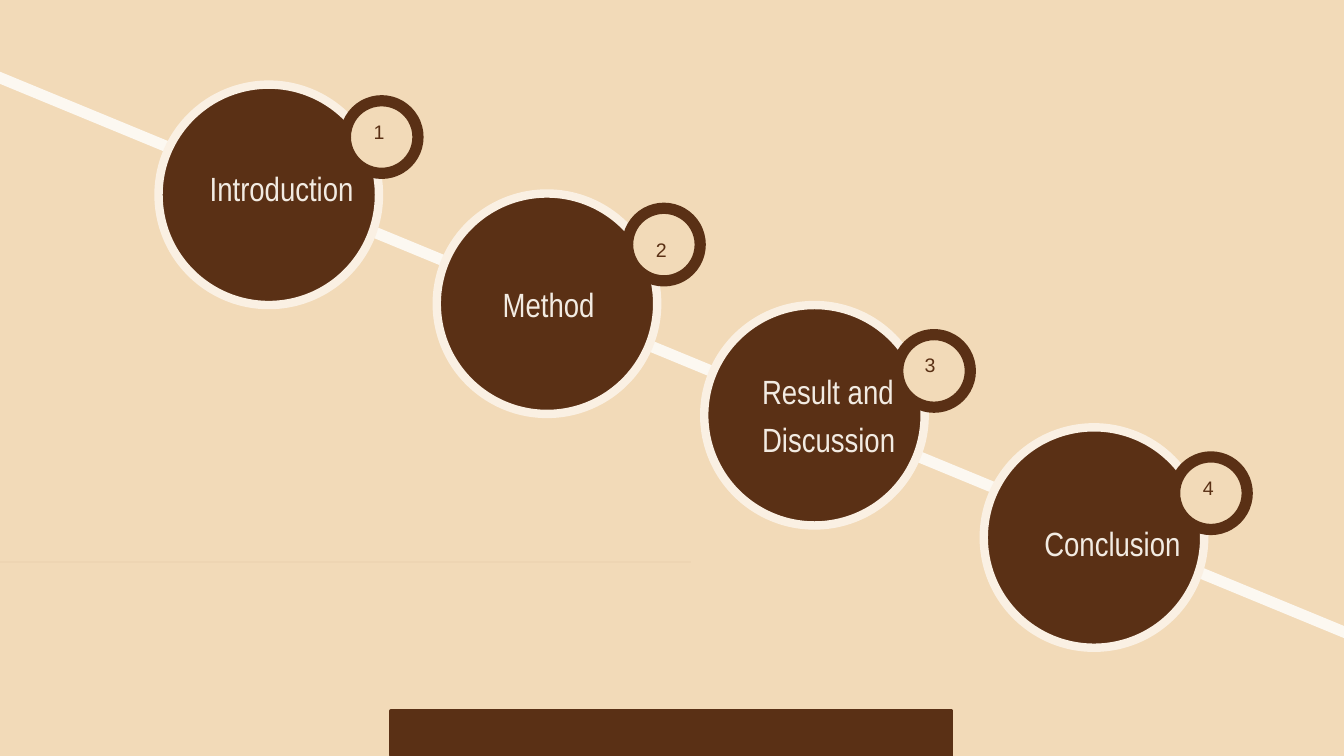
import pptx
import pptx.dml.color
import pptx.enum.shapes
import pptx.enum.text
import pptx.util
from lxml import etree

RGB = pptx.dml.color.RGBColor
SAND = RGB(0xF2, 0xDA, 0xB8)
BROWN = RGB(0x5A, 0x30, 0x15)
CREAM = RGB(0xFA, 0xF0, 0xE3)
TRAIL = RGB(0xFC, 0xF8, 0xF1)
FAINT = RGB(0xEE, 0xD5, 0xB3)
PALE = RGB(0xF2, 0xEB, 0xE2)

Pt = pptx.util.Pt
KIND = pptx.enum.shapes.MSO_SHAPE
FIT = pptx.enum.text.MSO_AUTO_SIZE
MID = pptx.enum.text.MSO_ANCHOR.MIDDLE
TOP = pptx.enum.text.MSO_ANCHOR.TOP
NS = "http://schemas.openxmlformats.org/drawingml/2006/main"

deck = pptx.Presentation()
deck.slide_width = pptx.util.Inches(10)
deck.slide_height = deck.slide_width * 9 // 16
COL = deck.slide_width // 10  # square grid, ten columns wide

slide = deck.slides.add_slide(deck.slide_layouts[6])
slide.background.fill.solid()
slide.background.fill.fore_color.rgb = SAND


def draw(kind, box, fill, edge, width):
    shape = slide.shapes.add_shape(kind, *[int(n * COL) for n in box])
    shape.shadow.inherit = False
    shape.fill.solid()
    shape.fill.fore_color.rgb = fill
    shape.line.color.rgb = edge
    shape.line.width = Pt(width)


def write(text, box, font, size, color, wrap, anchor):
    frame = slide.shapes.add_textbox(*[int(n * COL) for n in box]).text_frame
    frame.word_wrap = wrap
    frame.auto_size = FIT.NONE if wrap else FIT.SHAPE_TO_FIT_TEXT
    frame.vertical_anchor = anchor
    frame.margin_left = frame.margin_right = int(0.05 * COL)
    frame.margin_top = frame.margin_bottom = int(0.03 * COL)
    para = frame.paragraphs[0]
    if wrap:
        para.line_spacing = 1.2
    run = para.add_run()
    run.text = text
    run.font.name = font
    run.font.size = Pt(size)
    run.font.color.rgb = color


# Lines behind the steps: ends, colour, width
for ends, color, width in [
    ((-0.07, 0.55, 10.09, 4.74), TRAIL, 6),
    ((5.14, 4.18, 0, 4.18), FAINT, 1),
]:
    line = slide.shapes.add_connector(
        pptx.enum.shapes.MSO_CONNECTOR.STRAIGHT, *[int(n * COL) for n in ends])
    line.line.color.rgb = color
    line.line.width = Pt(width)
    etree.SubElement(line._element.spPr, "{%s}effectLst" % NS)

# Each step: label, then corners of disc, badge, number and label
steps = [
    ("Introduction", (1.18, 0.63), (2.57, 0.75), (2.73, 0.86), (1.51, 0.8)),
    ("Method", (3.25, 1.44), (4.67, 1.55), (4.83, 1.74), (3.69, 1.66)),
    ("Result and Discussion",
     (5.24, 2.27), (6.68, 2.49), (6.83, 2.6), (5.62, 2.49)),
    ("Conclusion", (7.32, 3.18), (8.74, 3.4), (8.9, 3.51), (7.72, 3.44)),
]
for count, (label, disc, badge, mark, spot) in enumerate(steps, 1):
    draw(KIND.OVAL, disc + (1.64, 1.64), BROWN, CREAM, 4.5)
    draw(KIND.OVAL, badge + (0.54, 0.54), SAND, BROWN, 6)
    write(str(count), mark + (0.18, 0.23), "Arial", 10.5, BROWN, False, TOP)
    write(label, spot + (1.22, 1.14), "Arial Narrow", 18, PALE, True, MID)

# Foot bar
draw(KIND.RECTANGLE, (2.91, 5.29, 4.17, 0.33), BROWN, BROWN, 2)

deck.save("out.pptx")
